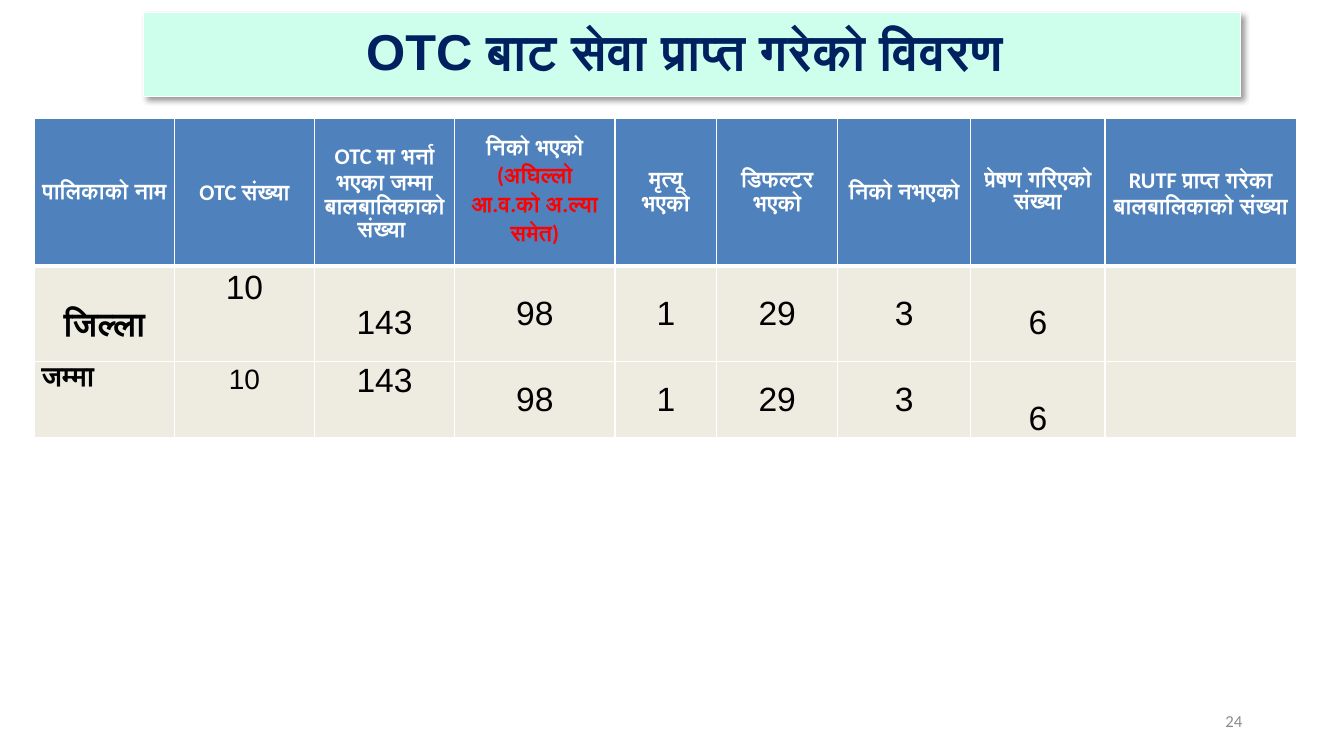
"""Build the slide on OTC services received, with a title bar and a results table."""
import pptx
import pptx.util
import pptx.dml.color
import pptx.enum.shapes
import pptx.enum.text
import pptx.oxml
import pptx.oxml.ns

Inches = pptx.util.Inches
ALIGN = pptx.enum.text.PP_ALIGN
ANCHOR = pptx.enum.text.MSO_ANCHOR

TITLE = "OTC बाट सेवा प्राप्त गरेको विवरण "
PAGE = "24"
HEADERS = [
    ["पालिकाको नाम "],
    ["OTC संख्या"],
    ["OTC मा भर्ना भएका जम्मा बालबालिकाको संख्या "],
    ["निको भएको", "(अघिल्लो आ.व.को अ.ल्या समेत)"],
    ["मृत्यू भएको"],
    ["डिफल्टर भएको"],
    ["निको नभएको"],
    ["प्रेषण गरिएको संख्या"],
    ["RUTF प्राप्त गरेका बालबालिकाको संख्या "],
]
DISTRICT = ["जिल्ला", "10", "143", "98", "1", "29", "3", "6", ""]
TOTAL = ["जम्मा", "10", "143", "98", "1", "29", "3", "6", ""]
COL_WIDTHS = [1.39, 1.39, 1.39, 1.59, 1.01, 1.2, 1.32, 1.33, 1.9]
ROW_HEIGHTS = [1.47, 0.95, 0.74]
TABLE_AT = (0.34, 1.17)
MIDDLE_COLS = range(3, 7)
REFERRED_COL = 7
LOWERED = {(1, 0): 0.41, (1, 2): 0.38, (1, 7): 0.38, (2, 7): 0.38}

THEME = {
    "head_font": "Calibri", "body_font": "Arial",
    "title_fill": "CEFEEC", "title_text": "002060",
    "head_fill": "4F81BD", "body_fill": "EEECE1",
    "white": "FFFFFF", "black": "000000", "red": "FF0000", "grey": "8C8C8C",
    "title": 36, "value": 24, "total": 20, "head": 16, "page": 12,
}


def rgb(key):
    """Return the theme colour with this name."""
    return pptx.dml.color.RGBColor.from_string(THEME[key])


def put_text(tf, lines, size, font="body_font", colors=("black",), bold=False,
             align=ALIGN.CENTER, spacing=None):
    """Write one paragraph per line; the last colour serves all later lines."""
    tf.word_wrap = True
    for i, line in enumerate(lines):
        p = tf.paragraphs[0] if i == 0 else tf.add_paragraph()
        p.alignment = align
        if spacing:
            p.line_spacing = spacing
        r = p.add_run()
        r.text = line
        r.font.size = pptx.util.Pt(THEME[size])
        r.font.name = THEME[font]
        r.font.bold = bold
        r.font.color.rgb = rgb(colors[min(i, len(colors) - 1)])


def style_cell(cell, fill, widths):
    """Set fill, insets and white borders given as side-to-points pairs."""
    cell.margin_left = cell.margin_right = Inches(0.07)
    cell.margin_top = cell.margin_bottom = 0
    cell.fill.solid()
    cell.fill.fore_color.rgb = rgb(fill)
    tc_pr = cell._tc.get_or_add_tcPr()
    for i, (side, points) in enumerate(widths.items()):
        tc_pr.insert(i, pptx.oxml.parse_xml(
            f'<a:ln{side} {pptx.oxml.ns.nsdecls("a")} w="{points * 12700}">'
            f'<a:solidFill><a:srgbClr val="{THEME["white"]}"/></a:solidFill>'
            f'</a:ln{side}>'))


def add_title(s):
    """Add the title bar with its soft shadow."""
    sp = s.shapes.add_shape(pptx.enum.shapes.MSO_SHAPE.RECTANGLE, Inches(1.42),
                            Inches(0.12), Inches(10.88), Inches(0.84))
    sp.fill.solid()
    sp.fill.fore_color.rgb = rgb("title_fill")
    sp.line.color.rgb = rgb("white")
    sp.line.width = pptx.util.Pt(0.5)
    sp.shadow.inherit = False
    effects = sp._element.spPr.find(pptx.oxml.ns.qn("a:effectLst"))
    effects.append(pptx.oxml.parse_xml(
        f'<a:outerShdw {pptx.oxml.ns.nsdecls("a")} blurRad="50800" dist="38100" '
        f'dir="2700000" algn="tl" rotWithShape="0"><a:srgbClr val="{THEME["black"]}">'
        '<a:alpha val="40000"/></a:srgbClr></a:outerShdw>'))
    tf = sp.text_frame
    tf.vertical_anchor = ANCHOR.MIDDLE
    put_text(tf, [TITLE], "title", colors=["title_text"], bold=True, spacing=0.9)


def add_results(s):
    """Add the table of results."""
    left, top = TABLE_AT
    table = s.shapes.add_table(
        len(ROW_HEIGHTS), len(COL_WIDTHS), Inches(left), Inches(top),
        Inches(sum(COL_WIDTHS)), Inches(sum(ROW_HEIGHTS))).table
    table.horz_banding = False
    for column, width in zip(table.columns, COL_WIDTHS):
        column.width = Inches(width)
    for row, height in zip(table.rows, ROW_HEIGHTS):
        row.height = Inches(height)
    for c, lines in enumerate(HEADERS):
        cell = table.cell(0, c)
        style_cell(cell, "head_fill", {"L": 1, "R": 1, "T": 1, "B": 3})
        cell.vertical_anchor = ANCHOR.MIDDLE
        put_text(cell.text_frame, lines, "head", font="head_font",
                 colors=["white", "red"], bold=True,
                 spacing=None if c == REFERRED_COL else 1.07)
    for r, values in enumerate([DISTRICT, TOTAL], start=1):
        for c, value in enumerate(values):
            cell = table.cell(r, c)
            style_cell(cell, "body_fill", {"L": 1, "R": 1, "T": 3 if r == 1 else 1, "B": 1})
            cell.margin_top = Inches(LOWERED.get((r, c), 0))
            cell.vertical_anchor = ANCHOR.MIDDLE if c in MIDDLE_COLS else ANCHOR.TOP
            if value:
                put_text(cell.text_frame, [value],
                         "total" if r == 2 and c < 2 else "value", bold=c == 0,
                         align=ALIGN.LEFT if (r, c) == (2, 0) else ALIGN.CENTER,
                         spacing=1.07 if c < 2 else None)


def main():
    """Build and save the slide."""
    prs = pptx.Presentation()
    prs.slide_width, prs.slide_height = Inches(13.33), Inches(7.5)
    s = prs.slides.add_slide(prs.slide_layouts[6])
    add_title(s)
    add_results(s)
    tf = s.shapes.add_textbox(Inches(9.42), Inches(6.95), Inches(3), Inches(0.4)).text_frame
    tf.vertical_anchor = ANCHOR.MIDDLE
    put_text(tf, [PAGE], "page", font="head_font", colors=["grey"], align=ALIGN.RIGHT)
    prs.save("out.pptx")


if __name__ == "__main__":
    main()
